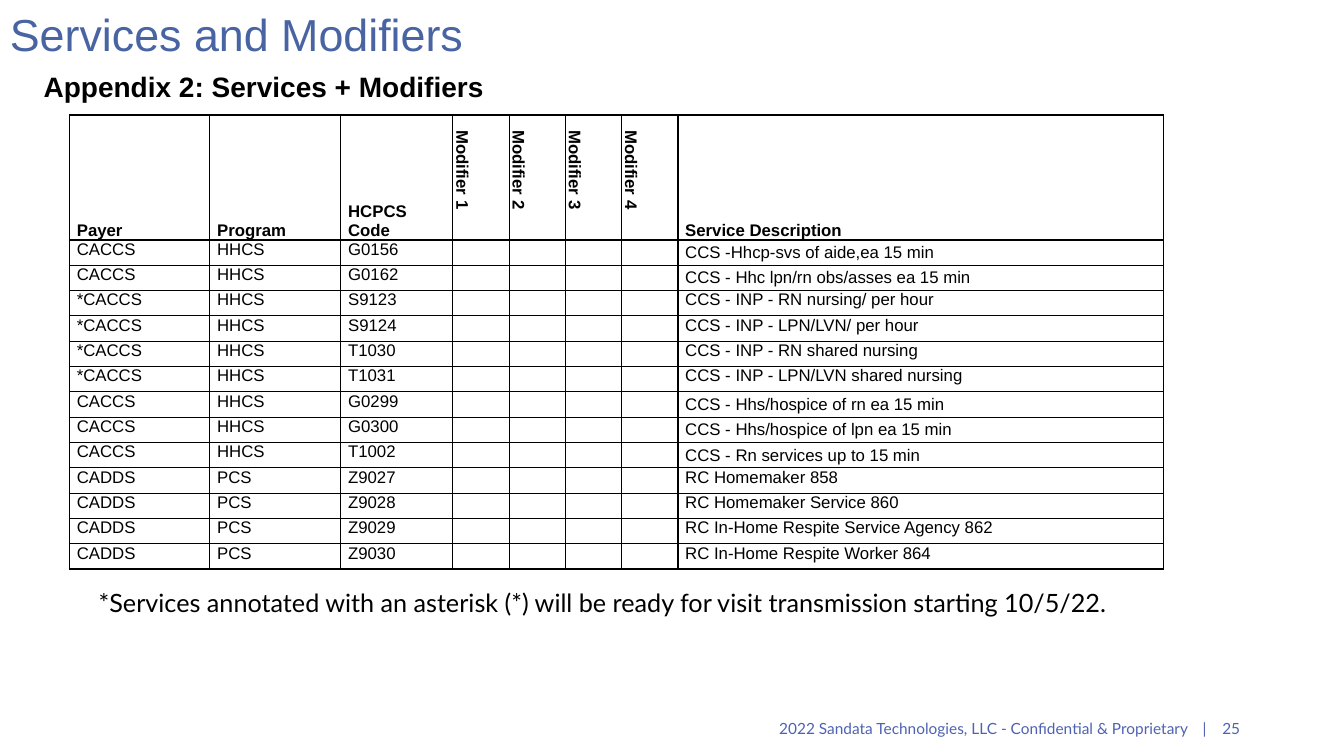
from dataclasses import dataclass

from lxml import etree
from pptx import Presentation
from pptx.dml.color import RGBColor
from pptx.enum import text as tx
from pptx.oxml import ns
from pptx.util import Pt


@dataclass(frozen=True)
class Theme:
    """Fonts, colours and type sizes of the slide."""
    sans: str = "Arial"
    lato: str = "Lato"
    ink: str = "000000"
    blue: str = "4964A2"
    foot: str = "4E62B2"
    title: int = 32
    head: int = 20
    note: int = 18
    cell: int = 12
    small: int = 11


T = Theme()
HEADS = ["Payer", "Program", "HCPCS Code", "Modifier 1", "Modifier 2",
         "Modifier 3", "Modifier 4", "Service Description"]
MODS = range(3, 7)
WIDTHS = [100.2, 93.6, 80, 40.2, 40.2, 40.2, 40.2, 347]
ROWS = [
    ("CACCS", "HHCS", "G0156", "CCS -Hhcp-svs of aide,ea 15 min"),
    ("CACCS", "HHCS", "G0162", "CCS - Hhc lpn/rn obs/asses ea 15 min"),
    ("*CACCS", "HHCS", "S9123", "CCS - INP - RN nursing/ per hour"),
    ("*CACCS", "HHCS", "S9124", "CCS - INP - LPN/LVN/ per hour"),
    ("*CACCS", "HHCS", "T1030", "CCS - INP - RN shared nursing"),
    ("*CACCS", "HHCS", "T1031", "CCS - INP - LPN/LVN shared nursing"),
    ("CACCS", "HHCS", "G0299", "CCS - Hhs/hospice of rn ea 15 min"),
    ("CACCS", "HHCS", "G0300", "CCS - Hhs/hospice of lpn ea 15 min"),
    ("CACCS", "HHCS", "T1002", "CCS - Rn services up to 15 min"),
    ("CADDS", "PCS", "Z9027", "RC Homemaker 858"),
    ("CADDS", "PCS", "Z9028", "RC Homemaker Service 860"),
    ("CADDS", "PCS", "Z9029", "RC In-Home Respite Service Agency 862"),
    ("CADDS", "PCS", "Z9030", "RC In-Home Respite Worker 864"),
]


def sub(node, tag, **attrs):
    """Append a child element and return it."""
    return etree.SubElement(node, ns.qn(tag), attrs)


def write(para, words, size, face, color, bold=False):
    """Add one styled run to a paragraph."""
    run = para.add_run()
    run.text = words
    font = run.font
    font.size, font.name, font.bold = Pt(size), face, bold
    font.color.rgb = RGBColor.from_string(color)


def label(slide, box, words, size, face, color, bold=False, mid=False):
    """Place a wrapped line of text in a box and return its frame."""
    frame = slide.shapes.add_textbox(*map(Pt, box)).text_frame
    frame.word_wrap = True
    if mid:
        frame.vertical_anchor = tx.MSO_ANCHOR.MIDDLE
    write(frame.paragraphs[0], words, size, face, color, bold)
    return frame


def header(slide, box):
    """Place the title and the subtitle under it."""
    left, top, width, height = box
    frame = label(slide, (left, top, width, 53.3), "Services and Modifiers",
                  T.title, T.sans, T.blue, mid=True)
    frame.paragraphs[0].line_spacing = 0.9
    label(slide, (left + 24, top + 46, 480, height - 46),
          "Appendix 2: Services + Modifiers", T.head, T.sans, T.ink, True)


def edge(cell):
    """Draw thin lines on all four sides of an unfilled cell."""
    cell.fill.background()
    props = cell._tc.get_or_add_tcPr()
    for spot, side in enumerate("LRTB"):
        line = etree.Element(ns.qn(f"a:ln{side}"), w=str(Pt(1)))
        sub(sub(line, "a:solidFill"), "a:srgbClr", val=T.ink)
        props.insert(spot, line)


def fill(cell, words, bold):
    """Write a table cell with its insets and borders."""
    cell.margin_left = cell.margin_right = Pt(5.2)
    cell.margin_top = cell.margin_bottom = 0
    para = cell.text_frame.paragraphs[0]
    if words:
        write(para, words, T.cell, T.sans, T.ink, bold)
    else:
        sub(para._p, "a:endParaRPr", sz=str(T.cell * 100))
    edge(cell)


def grid(slide, box):
    """Place the table of services."""
    data = [HEADS] + [row[:3] + ("",) * len(MODS) + row[3:] for row in ROWS]
    frame = slide.shapes.add_table(len(data), len(HEADS), *map(Pt, box))
    table = frame.table
    table.first_row = table.horz_banding = False
    for col, width in zip(table.columns, WIDTHS):
        col.width = Pt(width)
    top = 89.3
    for r, row in enumerate(data):
        table.rows[r].height = Pt((box[3] - top) / len(ROWS) if r else top)
        for c, words in enumerate(row):
            cell = table.cell(r, c)
            fill(cell, words, r == 0)
            if r == 0 and c in MODS:
                cell._tc.tcPr.set("vert", "vert")
                props = cell.text_frame.paragraphs[0]._p.get_or_add_pPr()
                props.set("marL", str(Pt(5.65)))
            elif r == 0:
                cell.vertical_anchor = tx.MSO_ANCHOR.BOTTOM
            elif words.startswith("CCS") and "INP" not in words:
                cell.vertical_anchor = tx.MSO_ANCHOR.MIDDLE


def note(slide, box):
    """Place the remark below the table."""
    label(slide, box, "*Services annotated with an asterisk (*) will be ready "
          "for visit transmission starting 10/5/22.", T.note, T.lato, T.ink)


def footer(slide, box):
    """Place the ownership line and page number on tab stops."""
    frame = label(slide, box, "2022 Sandata Technologies, LLC - Confidential "
                  "& Proprietary\t|\t25", T.small, T.lato, T.foot, mid=True)
    frame.margin_left, frame.margin_right = Pt(76.4), 0
    tabs = sub(frame.paragraphs[0]._p.get_or_add_pPr(), "a:tabLst")
    for stop in (302.5, 316.5):
        sub(tabs, "a:tab", pos=str(Pt(stop)), algn="l")


def main():
    """Build and save the slide."""
    deck = Presentation()
    deck.slide_width, deck.slide_height = Pt(960), Pt(540)
    slide = deck.slides.add_slide(deck.slide_layouts[6])
    header(slide, (0, 0, 831, 77.7))
    grid(slide, (49.7, 82.1, sum(WIDTHS), 324.7))
    note(slide, (63.4, 416.2, 747.4, 29))
    footer(slide, (480.2, 500.4, 414, 39.6))
    deck.save("out.pptx")


if __name__ == "__main__":
    main()
